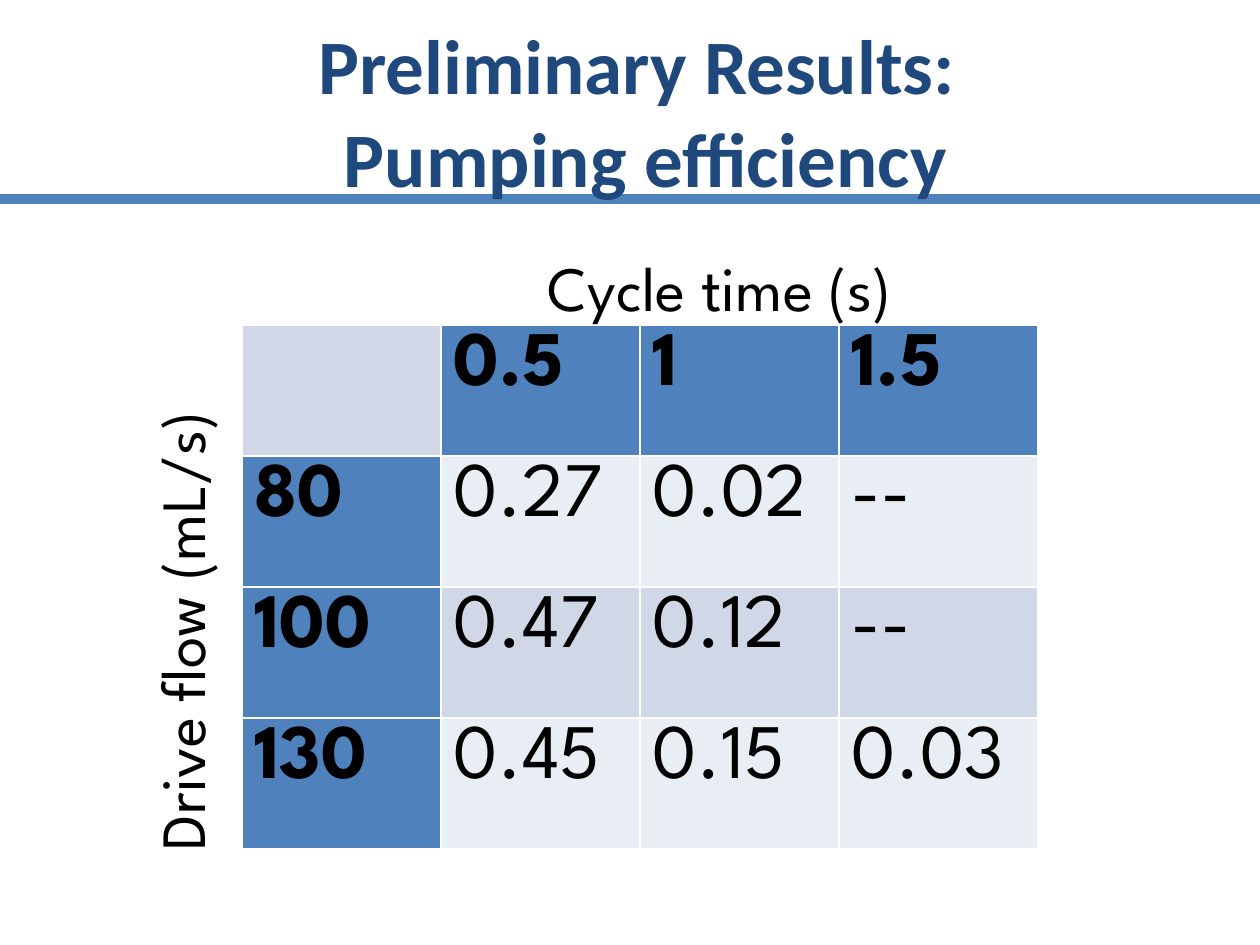
from dataclasses import dataclass

from lxml import etree
from pptx import Presentation
from pptx import util as u
from pptx.dml.color import RGBColor
from pptx.enum import shapes, text
from pptx.oxml import ns


@dataclass(frozen=True)
class Theme:
    title_font: str = "Calibri"
    body_font: str = "League Spartan"
    title_size: int = 44
    cell_size: int = 44
    label_size: int = 36
    navy: str = "1F497D"
    blue: str = "4F81BD"
    black: str = "000000"
    white: str = "FFFFFF"
    bands: tuple[str, str] = ("D0D8E8", "E9EDF4")


@dataclass(frozen=True)
class AxisLabel:
    wording: str
    left: float
    top: float
    width: float
    height: float = 0.71
    rotation: int = 0


THEME = Theme()
WIDTH, HEIGHT = 10, 7.5
RULE_Y = 1.58
TABLE_LEFT, TABLE_TOP = 1.92, 2.58
COLUMN_WIDTH, ROW_HEIGHT = 1.58, 1.04

RESULTS = [
    ["", "0.5", "1", "1.5"],
    ["80", "0.27", "0.02", "--"],
    ["100", "0.47", "0.12", "--"],
    ["130", "0.45", "0.15", "0.03"],
]
LABELS = [
    AxisLabel("Cycle time (s)", 4.25, 1.92, 3.07),
    AxisLabel("Drive flow (mL/s)", -0.49, 4.56, 3.86, rotation=270),
]


def style_text(frame, font: str, size: int, color: str, bold: bool = False) -> None:
    for para in frame.paragraphs:
        for span in para.runs:
            span.font.name = font
            span.font.size = u.Pt(size)
            span.font.bold = bold
            span.font.color.rgb = RGBColor.from_string(color)


def add_rule(page) -> None:
    y = u.Inches(RULE_Y)
    rule = page.shapes.add_connector(
        shapes.MSO_CONNECTOR.STRAIGHT, 0, y, u.Inches(WIDTH), y)
    rule.line.color.rgb = RGBColor.from_string(THEME.blue)
    rule.line.width = u.Pt(6)
    properties = rule._element.spPr
    etree.SubElement(properties, ns.qn("a:effectLst"))
    # Send the rule behind the title
    page.shapes._spTree.insert(2, rule._element)


def set_title(page, wording: str) -> None:
    title = page.shapes.title
    title.left, title.top = u.Inches(0.5), u.Inches(0.25)
    title.width, title.height = u.Inches(9.25), u.Inches(1.25)
    frame = title.text_frame
    frame.text = wording
    frame.vertical_anchor = text.MSO_ANCHOR.MIDDLE
    frame.auto_size = text.MSO_AUTO_SIZE.NONE
    frame.paragraphs[0].alignment = text.PP_ALIGN.CENTER
    style_text(frame, THEME.title_font, THEME.title_size, THEME.navy, bold=True)


def set_borders(cell, color: str, points: float) -> None:
    properties = cell._tc.get_or_add_tcPr()
    for index, side in enumerate(("lnL", "lnR", "lnT", "lnB")):
        line = etree.Element(ns.qn(f"a:{side}"), w=str(u.Pt(points)))
        fill = etree.SubElement(line, ns.qn("a:solidFill"))
        etree.SubElement(fill, ns.qn("a:srgbClr"), val=color)
        properties.insert(index, line)


def add_results(page, rows: list[list[str]]) -> None:
    row_count, column_count = len(rows), len(rows[0])
    table = page.shapes.add_table(
        row_count, column_count, u.Inches(TABLE_LEFT), u.Inches(TABLE_TOP),
        u.Inches(COLUMN_WIDTH * column_count), u.Inches(ROW_HEIGHT * row_count)).table
    table.first_row = table.horz_banding = False
    for r, row in enumerate(rows):
        for c, value in enumerate(row):
            cell = table.cell(r, c)
            is_header = bool(value) and (r == 0 or c == 0)
            color = THEME.blue if is_header else THEME.bands[r % 2]
            cell.fill.solid()
            cell.fill.fore_color.rgb = RGBColor.from_string(color)
            set_borders(cell, THEME.white, 1)
            cell.text_frame.text = value
            style_text(cell.text_frame, THEME.body_font, THEME.cell_size,
                       THEME.black, is_header)


def add_label(page, label: AxisLabel) -> None:
    box = page.shapes.add_textbox(
        u.Inches(label.left), u.Inches(label.top),
        u.Inches(label.width), u.Inches(label.height))
    box.rotation = label.rotation
    frame = box.text_frame
    frame.text = label.wording
    frame.word_wrap = False
    frame.auto_size = text.MSO_AUTO_SIZE.SHAPE_TO_FIT_TEXT
    style_text(frame, THEME.body_font, THEME.label_size, THEME.black)


def main() -> None:
    deck = Presentation()
    deck.slide_width, deck.slide_height = u.Inches(WIDTH), u.Inches(HEIGHT)
    page = deck.slides.add_slide(deck.slide_layouts[5])

    # Heading
    add_rule(page)
    set_title(page, "Preliminary Results: \vPumping efficiency")

    # Efficiency table with its two axis labels
    add_results(page, RESULTS)
    for label in LABELS:
        add_label(page, label)

    deck.save("out.pptx")


if __name__ == "__main__":
    main()
